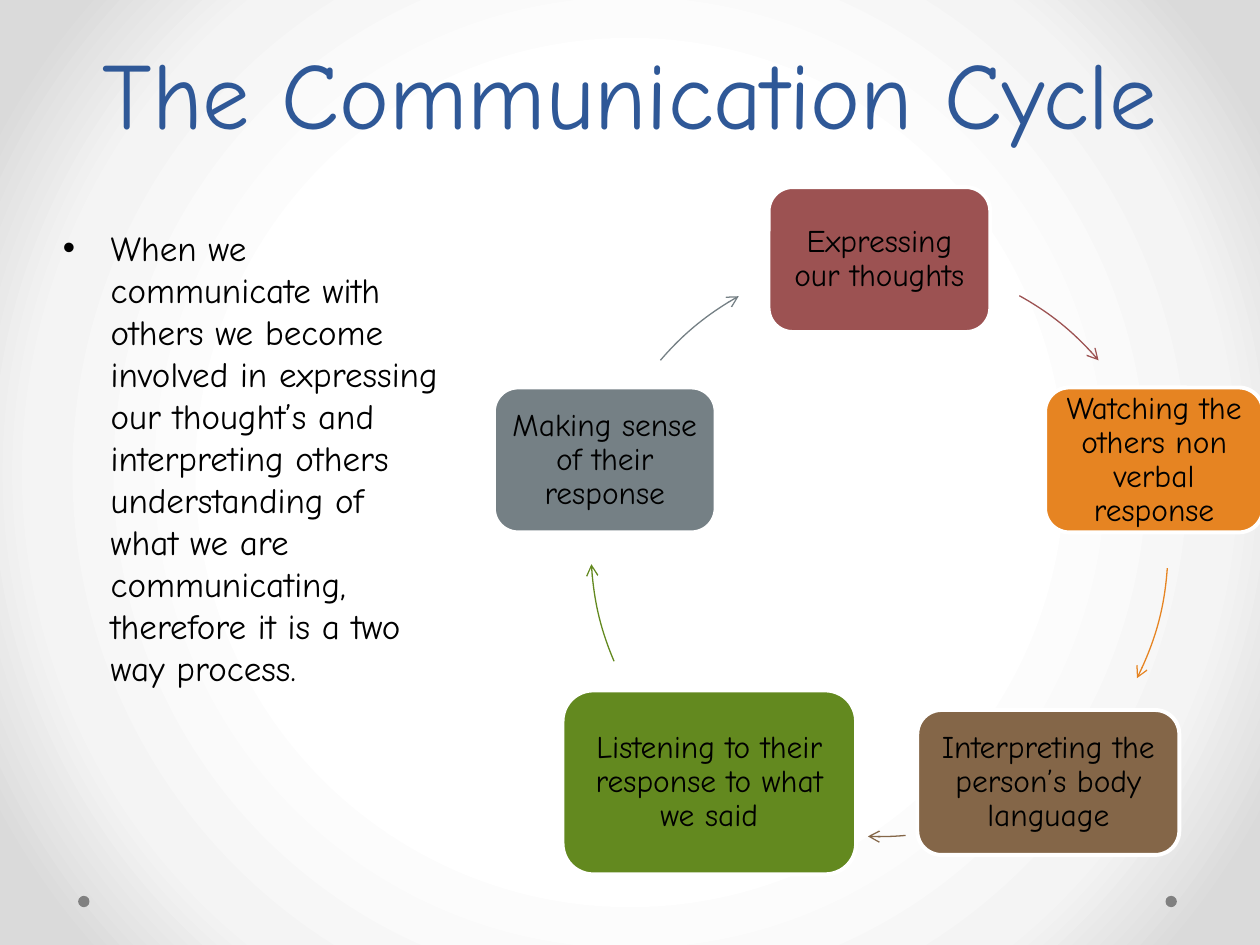
from pptx import Presentation
from pptx.dml.color import RGBColor
from pptx.enum import shapes, text
from pptx.oxml import parse_xml
from pptx.oxml.ns import nsdecls
from pptx.util import Inches, Pt

FONT = "Comic Neue"
COLOURS = {
    "title": "2F5897", "text": "000000", "outline": "FFFFFF", "dot": "808080",
    "red": "9C5252", "orange": "E68422", "brown": "846648",
    "green": "63891F", "slate": "758085",
}
BACKGROUND = [(0, "FFFFFF"), (50, "FFFFFF"), (76, "F4F4F4"), (92, "DADADA"), (100, "DADADA")]
TITLE = "The Communication Cycle"
BODY = ("When we communicate with others we become involved in expressing our "
        "thought’s and interpreting others understanding of what we are "
        "communicating, therefore it is a two way process.")
# Wording, colour, box centre, box size, start and end angle of the arrow that follows
STEPS = [
    ("Expressing our thoughts", "red", (6.98, 2.06), (1.76, 1.15), (299, 319.4)),
    ("Watching the others non verbal response", "orange", (9.16, 3.65), (1.73, 1.15), (4, 26.8)),
    ("Interpreting the person’s body language", "brown", (8.32, 6.21), (2.08, 1.15), (84.8, 92.3)),
    ("Listening to their response to what we said", "green", (5.63, 6.21), (2.33, 1.46), (156.9, 176.8)),
    ("Making sense of their response", "slate", (4.8, 3.65), (1.76, 1.15), (220.6, 240.8)),
]
RING = (4.69, 2.06, 4.58, 4.58)
DOTS = [(9.25, 7.11, 0.09, 0.09), (0.62, 7.11, 0.09, 0.09)]


def colour(name):
    return RGBColor.from_string(COLOURS[name])


def set_background(page):
    stops = "".join(f'<a:gs pos="{position * 1000}"><a:srgbClr val="{value}"/></a:gs>'
                    for position, value in BACKGROUND)
    page._element.cSld.insert(0, parse_xml(
        f'<p:bg {nsdecls("p", "a")}><p:bgPr><a:gradFill rotWithShape="1"><a:gsLst>{stops}</a:gsLst>'
        '<a:path path="circle"><a:fillToRect l="50000" t="50000" r="50000" b="50000"/></a:path>'
        '</a:gradFill><a:effectLst/></p:bgPr></p:bg>'))


def add_shape(page, kind, place, fill=None):
    shape = page.shapes.add_shape(kind, *map(Inches, place))
    shape.shadow.inherit = False
    if fill:
        shape.fill.solid()
        shape.fill.fore_color.rgb = colour(fill)
    else:
        shape.fill.background()
    shape.line.fill.background()
    return shape


def write(shape, wording, size, name="text", align=text.PP_ALIGN.CENTER,
          anchor=text.MSO_ANCHOR.MIDDLE):
    """Fill the shape with one paragraph and return that paragraph."""
    frame = shape.text_frame
    frame.text = wording
    frame.word_wrap = True
    frame.vertical_anchor = anchor
    para = frame.paragraphs[0]
    para.alignment = align
    font = para.runs[0].font
    font.name, font.size, font.color.rgb = FONT, Pt(size), colour(name)
    return para


def add_title(page):
    box = page.shapes.add_textbox(*map(Inches, (0.5, 0, 9, 1.23)))
    write(box, TITLE, 54, "title", anchor=text.MSO_ANCHOR.BOTTOM).line_spacing = Pt(58)


def add_body(page):
    box = page.shapes.add_textbox(*map(Inches, (0.4, 1.75, 3.18, 4.95)))
    para = write(box, BODY, 20, align=text.PP_ALIGN.LEFT, anchor=text.MSO_ANCHOR.TOP)
    para.space_before = Pt(4)
    properties = para._p.get_or_add_pPr()
    properties.set("marL", str(Inches(0.38)))
    properties.set("indent", str(Inches(-0.38)))
    properties.append(parse_xml(f'<a:buFont {nsdecls("a")} typeface="Arial"/>'))
    properties.append(parse_xml(f'<a:buChar {nsdecls("a")} char="•"/>'))


def add_step(page, wording, fill, centre, size):
    (x, y), (width, height) = centre, size
    box = add_shape(page, shapes.MSO_SHAPE.ROUNDED_RECTANGLE,
                    (x - width / 2, y - height / 2, width, height), fill)
    box.line.color.rgb = colour("outline")
    box.line.width = Pt(2.25)
    frame = box.text_frame
    frame.margin_left = frame.margin_right = Inches(0.07)
    frame.margin_top = frame.margin_bottom = Inches(0.07)
    para = write(box, wording, 18)
    para.line_spacing = 0.9
    para.space_after = Pt(6.3)


def add_arc_arrow(page, name, angles):
    arc = add_shape(page, shapes.MSO_SHAPE.ARC, RING)
    for index, angle in enumerate(angles):
        arc.adjustments[index] = angle * 0.6  # 60000ths of a degree, in units of 100000
    arc.line.color.rgb = colour(name)
    arc.line.width = Pt(0.75)
    arc.line._get_or_add_ln().append(parse_xml(f'<a:tailEnd {nsdecls("a")} type="arrow"/>'))


def main():
    deck = Presentation()
    deck.slide_width, deck.slide_height = Inches(10), Inches(7.5)
    page = deck.slides.add_slide(deck.slide_layouts[6])
    set_background(page)
    for place in DOTS:
        add_shape(page, shapes.MSO_SHAPE.OVAL, place, "dot")
    add_title(page)
    add_body(page)
    for wording, name, centre, size, angles in STEPS:
        add_step(page, wording, name, centre, size)
        add_arc_arrow(page, name, angles)
    deck.save("out.pptx")


if __name__ == "__main__":
    main()
